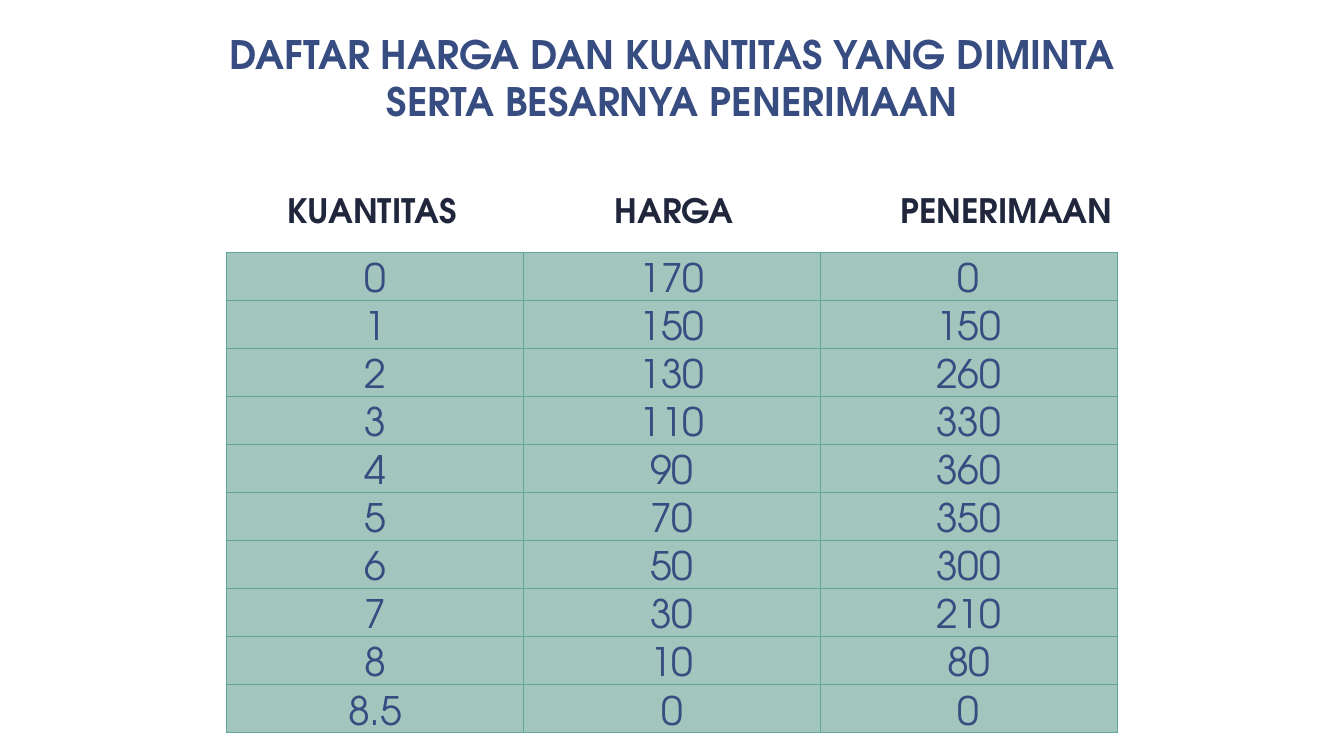
from lxml.etree import SubElement
from pptx import Presentation
from pptx.dml.color import RGBColor
from pptx.enum.text import MSO_ANCHOR as Anchor, MSO_AUTO_SIZE as AutoSize, PP_ALIGN as Align
from pptx.oxml.ns import qn
from pptx.util import Pt

NAVY = RGBColor(0x37, 0x4C, 0x81)
DARK = RGBColor(0x20, 0x27, 0x3C)
MINT = RGBColor(0xA2, 0xC6, 0xBD)
GREEN = RGBColor(0x61, 0xA7, 0x96)

TITLE = "DAFTAR HARGA DAN KUANTITAS YANG DIMINTA SERTA BESARNYA PENERIMAAN"
# Heading: left, width
HEADINGS = {"KUANTITAS": (198, 160), "HARGA": (432, 103), "PENERIMAAN": (636, 169)}
DEMAND = [
    ("0", "170", "0"),
    ("1", "150", "150"),
    ("2", "130", "260"),
    ("3", "110", "330"),
    ("4", "90", "360"),
    ("5", "70", "350"),
    ("6", "50", "300"),
    ("7", "30", "210"),
    ("8", "10", "80"),
    ("8.5", "0", "0"),
]


def apply(target, values):
    for name, value in values.items():
        setattr(target, name, value)


class SlideBuilder:
    font_name = "TeX Gyre Adventor"

    def __init__(self, presentation):
        self.slide = presentation.slides.add_slide(presentation.slide_layouts[5])

    def set_text(self, frame, text, size, color, bold, align):
        paragraph = frame.paragraphs[0]
        paragraph.text = text
        paragraph.alignment = align
        font = paragraph.runs[0].font
        apply(font, {"name": self.font_name, "size": Pt(size), "bold": bold})
        font.color.rgb = color

    def title(self, text, left, top, width, height):
        shape = self.slide.shapes.title
        apply(shape, {"left": Pt(left), "top": Pt(top), "width": Pt(width), "height": Pt(height)})
        frame = shape.text_frame
        apply(frame, {"word_wrap": True, "vertical_anchor": Anchor.TOP,
                      "auto_size": AutoSize.SHAPE_TO_FIT_TEXT})
        self.set_text(frame, text, 28, NAVY, True, Align.CENTER)

    def heading(self, text, left, top, width, height):
        shape = self.slide.shapes.add_textbox(Pt(left), Pt(top), Pt(width), Pt(height))
        apply(shape.text_frame, {"word_wrap": False, "auto_size": AutoSize.SHAPE_TO_FIT_TEXT})
        self.set_text(shape.text_frame, text, 24, DARK, True, Align.LEFT)

    def borders(self, cell):
        properties = cell._tc.get_or_add_tcPr()
        for side in ("lnL", "lnR", "lnT", "lnB"):
            line = SubElement(properties, qn(f"a:{side}"), w=str(Pt(0.5)))
            fill = SubElement(line, qn("a:solidFill"))
            SubElement(fill, qn("a:srgbClr"), val=str(GREEN))

    def table(self, rows, left, top, column_width, row_height):
        columns = len(rows[0])
        table = self.slide.shapes.add_table(
            len(rows), columns, Pt(left), Pt(top),
            Pt(column_width * columns), Pt(row_height * len(rows))).table
        apply(table, {"first_row": False, "horz_banding": False})
        for row_index, values in enumerate(rows):
            for column_index, value in enumerate(values):
                cell = table.cell(row_index, column_index)
                apply(cell, {"margin_left": Pt(0.7), "margin_right": Pt(0.7),
                             "margin_top": Pt(0.7), "margin_bottom": 0,
                             "vertical_anchor": Anchor.BOTTOM})
                self.borders(cell)
                cell.fill.solid()
                cell.fill.fore_color.rgb = MINT
                self.set_text(cell.text_frame, value, 28, NAVY, False, Align.CENTER)


def main():
    presentation = Presentation()
    apply(presentation, {"slide_width": Pt(960), "slide_height": Pt(540)})
    builder = SlideBuilder(presentation)

    # Title
    builder.title(TITLE, 150, 18, 660, 75)

    # Demand table
    builder.table(DEMAND, 162, 180, 212, 34.34)

    # Column headings
    for text, (left, width) in HEADINGS.items():
        builder.heading(text, left, 132, width, 36)

    presentation.save("out.pptx")


if __name__ == "__main__":
    main()
